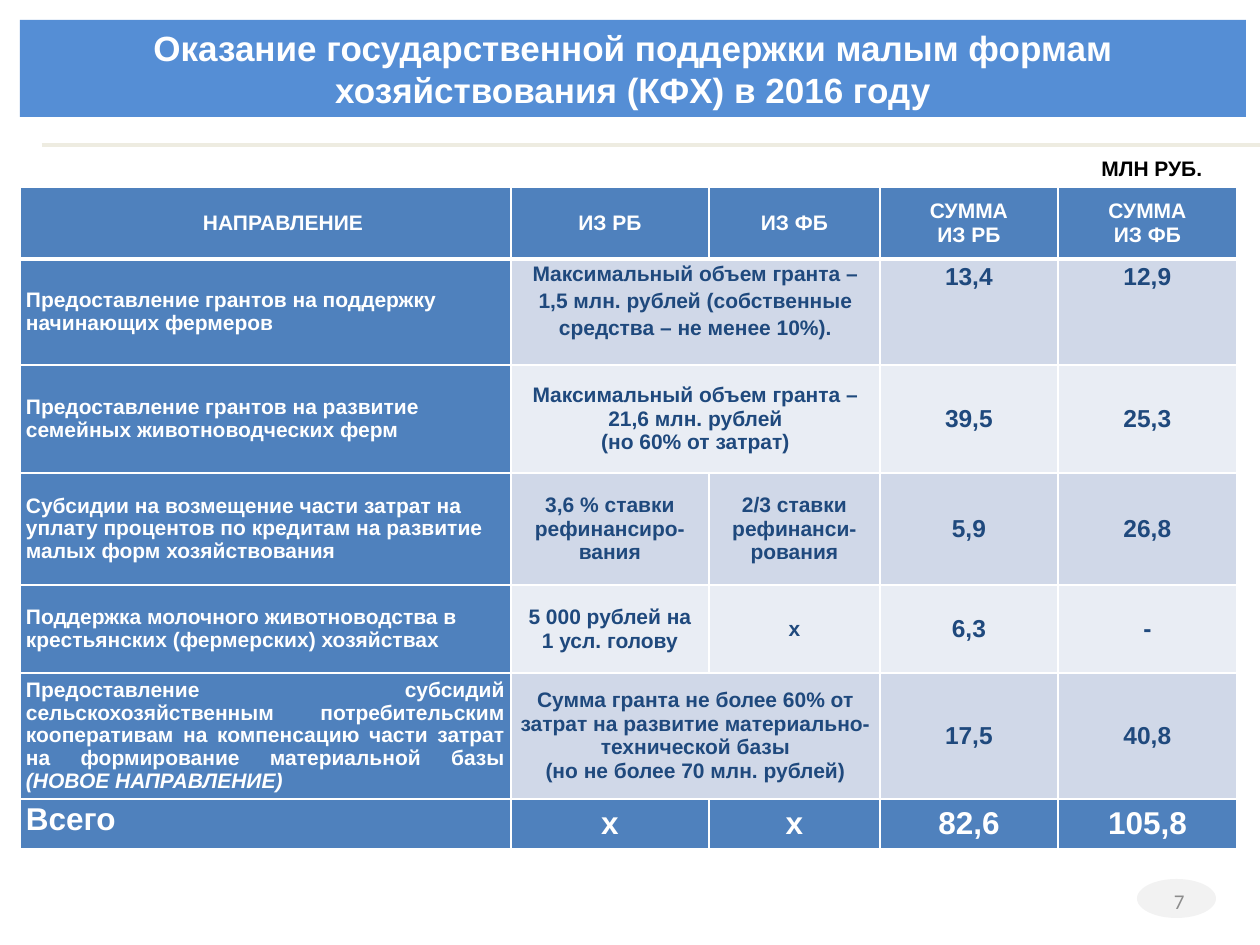
from lxml import etree
from pptx import Presentation
from pptx import util as u
from pptx.dml.color import RGBColor
from pptx.enum import shapes, text
from pptx.oxml import ns

SCALE = 914400 / 126
WHITE = RGBColor(0xFF, 0xFF, 0xFF)
BLACK = RGBColor(0, 0, 0)
BANNER = RGBColor(0x55, 0x8E, 0xD5)
RULE = RGBColor(0xEE, 0xEC, 0xE1)
BLUE = RGBColor(0x4F, 0x81, 0xBD)
NAVY = RGBColor(0x1F, 0x49, 0x7D)
BAND_DARK = RGBColor(0xD0, 0xD8, 0xE8)
BAND_LIGHT = RGBColor(0xE9, 0xED, 0xF4)
BADGE = RGBColor(0xF2, 0xF2, 0xF2)
GREY = RGBColor(0x8C, 0x8C, 0x8C)

LEFT, CENTER, RIGHT, JUSTIFY = (
    text.PP_ALIGN.LEFT, text.PP_ALIGN.CENTER, text.PP_ALIGN.RIGHT, text.PP_ALIGN.JUSTIFY)
TOP, MIDDLE = text.MSO_ANCHOR.TOP, text.MSO_ANCHOR.MIDDLE

COLUMNS = [491, 198, 171, 178, 179]
ROWS = [72, 106, 108, 112, 88, 126, 50]
HEADER = ["НАПРАВЛЕНИЕ", "ИЗ РБ", "ИЗ ФБ", "СУММА\nИЗ РБ", "СУММА\nИЗ ФБ"]
MEASURES = [
    ["Предоставление грантов на поддержку начинающих фермеров",
     "Максимальный объем гранта – 1,5 млн. рублей (собственные средства – не менее 10%).",
     None, "13,4", "12,9"],
    ["Предоставление грантов на развитие семейных животноводческих ферм",
     "Максимальный объем гранта –21,6 млн. рублей\n(но 60% от затрат)",
     None, "39,5", "25,3"],
    ["Субсидии на возмещение части затрат на уплату процентов по кредитам на развитие "
     "малых форм хозяйствования",
     "3,6 % ставки рефинансиро-вания", "2/3 ставки рефинанси-рования", "5,9", "26,8"],
    ["Поддержка молочного животноводства в крестьянских (фермерских) хозяйствах",
     "5 000 рублей на\v1 усл. голову", "х", "6,3", "-"],
    ["Предоставление субсидий сельскохозяйственным потребительским кооперативам "
     "на компенсацию части затрат на формирование материальной базы ",
     "Сумма гранта не более 60% от затрат на развитие материально-технической базы\v"
     "(но не более 70 млн. рублей)",
     None, "17,5", "40,8"],
]
NEW_MEASURE = "(НОВОЕ НАПРАВЛЕНИЕ)"
TOTALS = ["Всего", "х", "х", "82,6", "105,8"]


def px(value):
    return u.Emu(round(value * SCALE))


def apply(target, values):
    for key, value in values.items():
        setattr(target, key, value)


def format_runs(paragraph, size, color, name="Arial", bold=True):
    for run in paragraph.runs:
        apply(run.font, {"size": u.Pt(size), "name": name, "bold": bold})
        run.font.color.rgb = color


def write(frame, words, size, color, align, spacing=None, **font):
    frame.text = words
    for paragraph in frame.paragraphs:
        apply(paragraph, {"alignment": align, "line_spacing": spacing})
        format_runs(paragraph, size, color, **font)


def add_banner(slide, x, y, width, height):
    title = slide.shapes.title
    apply(title, {"left": px(x), "top": px(y), "width": px(width), "height": px(height)})
    title.fill.solid()
    title.fill.fore_color.rgb = BANNER
    write(title.text_frame,
          "Оказание государственной поддержки малым формам хозяйствования (КФХ) в 2016 году",
          20, WHITE, CENTER)
    apply(title.text_frame, {"word_wrap": True, "vertical_anchor": MIDDLE,
                             "auto_size": text.MSO_AUTO_SIZE.NONE})

    rule_y = px(y + 125)
    rule = slide.shapes.add_connector(
        shapes.MSO_CONNECTOR.STRAIGHT, px(x + 22), rule_y, px(1260), rule_y)
    rule.line.color.rgb = RULE
    rule.line.width = u.Pt(2.25)
    etree.SubElement(rule.element.spPr, ns.qn("a:effectLst"))


def add_label(slide, x, y, width, height, words, size, color, align, anchor, wrap, **font):
    frame = slide.shapes.add_textbox(px(x), px(y), px(width), px(height)).text_frame
    apply(frame, {"word_wrap": wrap, "vertical_anchor": anchor})
    write(frame, words, size, color, align, **font)


def set_borders(cell, bottom):
    properties = cell._tc.get_or_add_tcPr()
    for side, points in {"lnL": 1, "lnR": 1, "lnT": 1, "lnB": bottom}.items():
        line = etree.SubElement(properties, ns.qn(f"a:{side}"), w=str(u.Pt(points)))
        fill = etree.SubElement(line, ns.qn("a:solidFill"))
        etree.SubElement(fill, ns.qn("a:srgbClr"), val=str(WHITE))


def style_cell(cell, fill, anchor=MIDDLE, bottom=1):
    set_borders(cell, bottom)
    cell.fill.solid()
    cell.fill.fore_color.rgb = fill
    apply(cell, {"vertical_anchor": anchor, "margin_left": px(6), "margin_right": px(6),
                 "margin_top": 0, "margin_bottom": 0})


def fill_header(table):
    for column, words in enumerate(HEADER):
        cell = table.cell(0, column)
        style_cell(cell, BLUE, bottom=3)
        write(cell.text_frame, words, 12, WHITE, CENTER)
    table.cell(0, 0).margin_left = px(41)


def fill_measure(table, row, measure):
    first, last = row == 1, row == len(MEASURES)
    band = BAND_DARK if row % 2 else BAND_LIGHT
    for column, words in enumerate(measure):
        cell = table.cell(row, column)
        if column == 0:
            style_cell(cell, BLUE)
            write(cell.text_frame, words, 12, WHITE, JUSTIFY if last else LEFT, u.Pt(13))
            continue
        style_cell(cell, band, TOP if first else MIDDLE)
        if words is None:
            table.cell(row, column - 1).merge(cell)
        else:
            write(cell.text_frame, words, 14 if column > 2 else 12, NAVY, CENTER,
                  1.15 if first else None)
    if last:
        paragraph = table.cell(row, 0).text_frame.paragraphs[0]
        note = paragraph.add_run()
        note.text = NEW_MEASURE
        format_runs(paragraph, 12, WHITE)
        note.font.italic = True


def fill_totals(table, row):
    for column, words in enumerate(TOTALS):
        cell = table.cell(row, column)
        style_cell(cell, BLUE, MIDDLE if column else TOP)
        write(cell.text_frame, words, 18, WHITE, CENTER if column else JUSTIFY,
              None if column else u.Pt(11))
    table.cell(row, 0).margin_top = u.Pt(11)


def add_support_table(slide, x, y):
    table = slide.shapes.add_table(len(ROWS), len(COLUMNS), px(x), px(y),
                                   px(sum(COLUMNS)), px(sum(ROWS))).table
    for column, width in zip(table.columns, COLUMNS):
        column.width = px(width)
    for row, height in zip(table.rows, ROWS):
        row.height = px(height)
    fill_header(table)
    for row, measure in enumerate(MEASURES, 1):
        fill_measure(table, row, measure)
    fill_totals(table, len(ROWS) - 1)


def add_page_number(slide, x, y, width, height):
    badge = slide.shapes.add_shape(
        shapes.MSO_SHAPE.OVAL, px(x), px(y), px(width), px(height))
    badge.shadow.inherit = False
    badge.fill.solid()
    badge.fill.fore_color.rgb = BADGE
    badge.line.fill.background()
    add_label(slide, x - 234, y - 3, 294, 50, "7", 12, GREY, RIGHT, MIDDLE, True,
              name="Calibri", bold=False)


def main():
    deck = Presentation()
    apply(deck, {"slide_width": px(1260), "slide_height": px(945)})
    slide = deck.slides.add_slide(deck.slide_layouts[5])
    add_banner(slide, 20, 20, 1226, 97)
    add_support_table(slide, 20, 187)
    add_label(slide, 1089, 149, 127, 38, "МЛН РУБ.", 12, BLACK, LEFT, TOP, False)
    add_page_number(slide, 1137, 879, 79, 39)
    deck.save("out.pptx")


if __name__ == "__main__":
    main()
